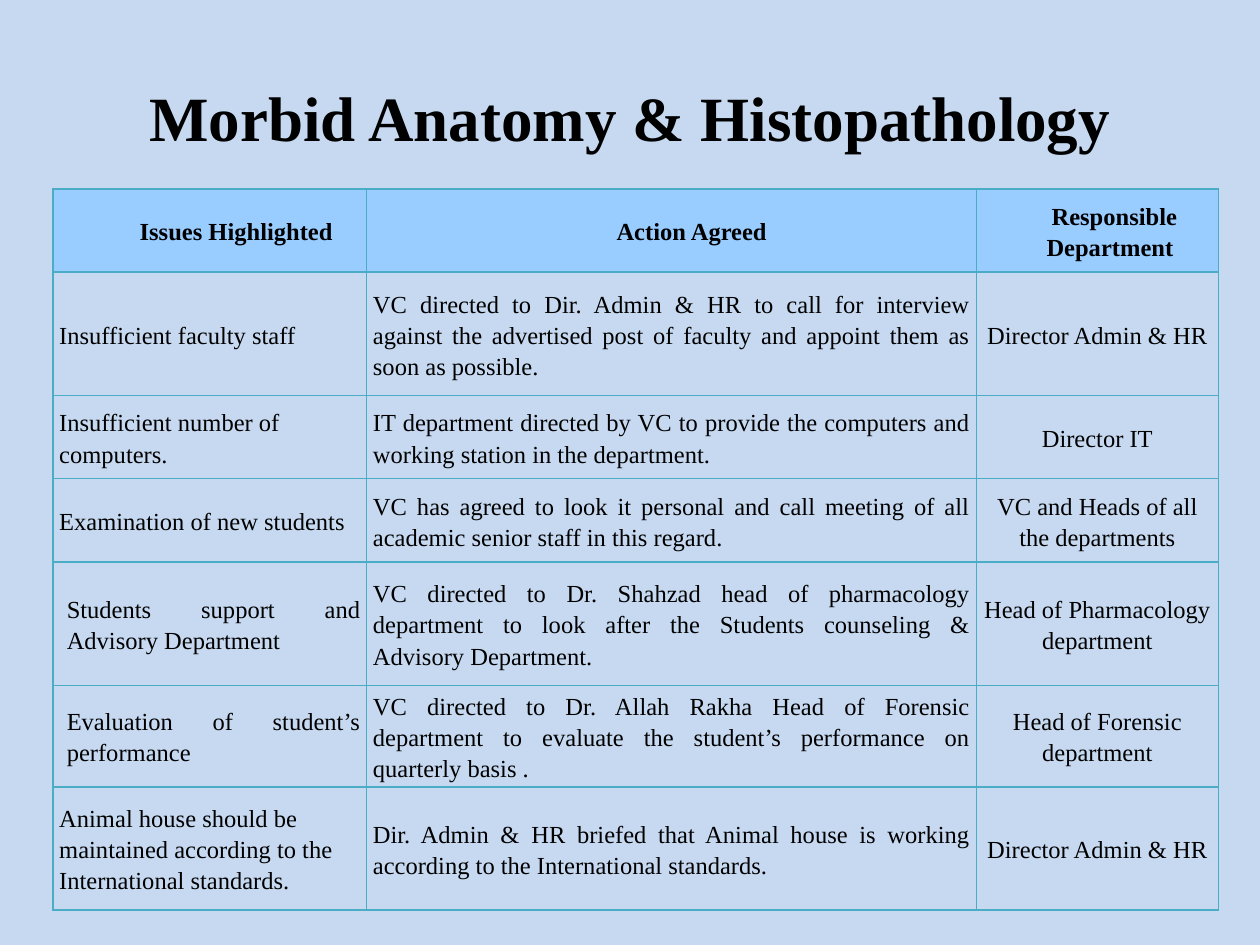
import pptx
import pptx.util
import pptx.dml.color
import pptx.enum.text
import pptx.oxml.ns
from dataclasses import dataclass
from lxml import etree
from pptx.util import Inches

ALIGN = pptx.enum.text.PP_ALIGN
MIDDLE = pptx.enum.text.MSO_ANCHOR.MIDDLE


@dataclass(frozen=True)
class Theme:
    font: str = "Times New Roman"
    background: str = "C6D9F1"
    header: str = "99CCFF"
    border: str = "4BACC6"
    text: str = "000000"
    title_size: int = 36
    table_size: int = 14
    border_width: int = 1
    line_spacing: float = 1.15


THEME = Theme()

TITLE = "Morbid Anatomy & Histopathology"
COLUMN_WIDTHS = [2.49, 4.84, 1.92]
ROW_HEIGHTS = [0.66, 0.98, 0.66, 0.66, 0.98, 0.67, 0.98]
COLUMN_ALIGNS = [ALIGN.LEFT, ALIGN.JUSTIFY, ALIGN.CENTER]
ROWS = [
    ("Issues Highlighted", "Action Agreed", "Responsible\nDepartment"),
    ("Insufficient faculty staff",
     "VC directed to Dir. Admin & HR to call for interview against the "
     "advertised post of faculty and appoint them as soon as possible.",
     "Director Admin & HR"),
    ("Insufficient number of computers.",
     "IT department directed by VC to provide the computers and working "
     "station in the department.",
     "Director IT"),
    ("Examination of new students",
     "VC has agreed to look it personal and call meeting of all academic "
     "senior staff in this regard.",
     "VC and Heads of all the departments"),
    ("Students support and Advisory Department",
     "VC directed to Dr. Shahzad head of pharmacology department to look "
     "after the Students counseling & Advisory Department.",
     "Head of Pharmacology department"),
    ("Evaluation of student’s performance",
     "VC directed to Dr. Allah Rakha Head of Forensic department to evaluate "
     "the student’s performance on quarterly basis .",
     "Head of Forensic department"),
    ("Animal house should be maintained according to the International "
     "standards.",
     "Dir. Admin & HR briefed that Animal house is working according to the "
     "International standards.",
     "Director Admin & HR"),
]
# Left indents of each paragraph, by column
HEADER_INDENTS = [[0.42], [0.32], [0.27, 0.2]]
# Issues set justified with a small indent
INDENTED_ROWS = {4, 5}


def color(value):
    return pptx.dml.color.RGBColor.from_string(value)


def style_paragraph(para, size, bold, align):
    para.alignment = align
    for span in para.runs:
        span.font.name = THEME.font
        span.font.size = pptx.util.Pt(size)
        span.font.bold = bold
        span.font.color.rgb = color(THEME.text)


def indent(para, inches):
    para._p.get_or_add_pPr().set("marL", str(Inches(inches)))


def border_cell(cell):
    properties = cell._tc.get_or_add_tcPr()
    qn = pptx.oxml.ns.qn
    for index, side in enumerate(("lnL", "lnR", "lnT", "lnB")):
        line = etree.Element(qn(f"a:{side}"),
                             w=str(pptx.util.Pt(THEME.border_width)))
        fill = etree.SubElement(line, qn("a:solidFill"))
        etree.SubElement(fill, qn("a:srgbClr"), val=THEME.border)
        properties.insert(index, line)


def add_title(page, left, top, width, height):
    box = page.shapes.add_textbox(left, top, width, height)
    frame = box.text_frame
    frame.word_wrap = True
    frame.vertical_anchor = MIDDLE
    frame.text = TITLE
    style_paragraph(frame.paragraphs[0], THEME.title_size, True, ALIGN.CENTER)


def fill_cell(cell, row, column):
    is_header = row == 0
    is_indented = column == 0 and row in INDENTED_ROWS
    align = COLUMN_ALIGNS[column]
    if is_header:
        align = ALIGN.CENTER
    elif is_indented:
        align = ALIGN.JUSTIFY

    cell.margin_left = cell.margin_right = Inches(0.05)
    cell.margin_top = cell.margin_bottom = 0
    cell.vertical_anchor = MIDDLE
    cell.text_frame.text = ROWS[row][column]
    for index, para in enumerate(cell.text_frame.paragraphs):
        style_paragraph(para, THEME.table_size, is_header, align)
        para.line_spacing = THEME.line_spacing
        if is_header:
            indent(para, HEADER_INDENTS[column][index])
        elif is_indented:
            indent(para, 0.06)
            para.space_before = pptx.util.Pt(0.8)
    if is_header and column == 2:
        cell.text_frame.paragraphs[0].space_before = pptx.util.Pt(4.2)

    if is_header:
        cell.fill.solid()
        cell.fill.fore_color.rgb = color(THEME.header)
    else:
        cell.fill.background()
    border_cell(cell)


def add_actions_table(page, left, top, width, height):
    frame = page.shapes.add_table(len(ROWS), len(COLUMN_WIDTHS),
                                  left, top, width, height)
    table = frame.table
    table.horz_banding = False
    for column, inches in zip(table.columns, COLUMN_WIDTHS):
        column.width = Inches(inches)
    for row, inches in zip(table.rows, ROW_HEIGHTS):
        row.height = Inches(inches)
    for row in range(len(ROWS)):
        for column in range(len(COLUMN_WIDTHS)):
            fill_cell(table.cell(row, column), row, column)


def main():
    deck = pptx.Presentation()
    deck.slide_width, deck.slide_height = Inches(10), Inches(7.5)
    page = deck.slides.add_slide(deck.slide_layouts[6])
    page.background.fill.solid()
    page.background.fill.fore_color.rgb = color(THEME.background)

    # Heading
    add_title(page, Inches(0.5), Inches(0.3), Inches(9), Inches(1.25))
    # Issues, actions and responsible departments
    add_actions_table(page, Inches(0.42), Inches(1.5),
                      Inches(sum(COLUMN_WIDTHS)), Inches(sum(ROW_HEIGHTS)))
    deck.save("out.pptx")


if __name__ == "__main__":
    main()
